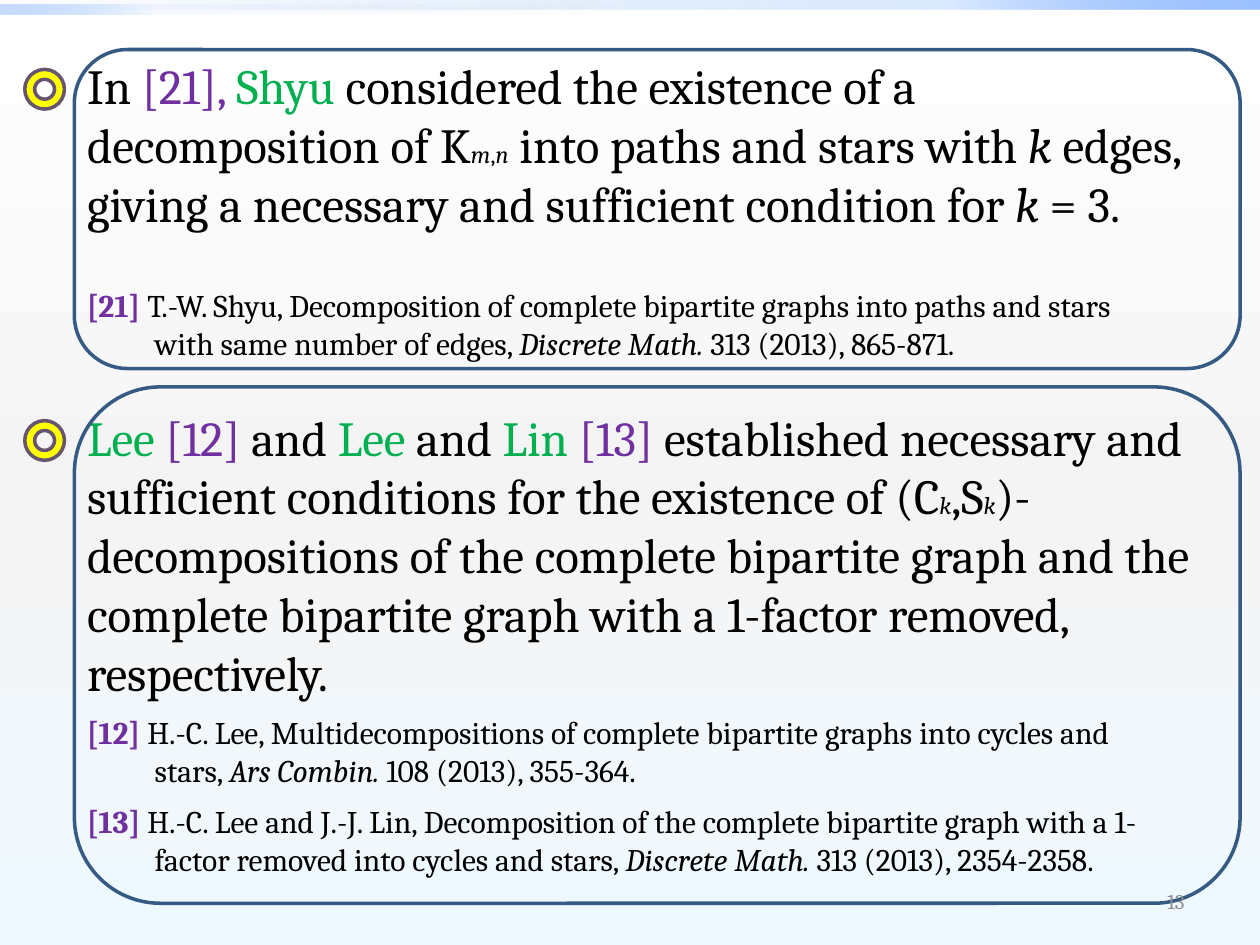
"""Builds a slide on earlier results for decompositions of bipartite graphs."""
from lxml.etree import SubElement
from pptx import Presentation
from pptx.dml.color import RGBColor
from pptx.enum.shapes import MSO_SHAPE as SHAPE
from pptx.enum.text import MSO_ANCHOR as ANCHOR, MSO_AUTO_SIZE as AUTO, PP_ALIGN as ALIGN
from pptx.oxml.ns import qn
from pptx.util import Cm, Pt

BLACK = RGBColor(0x00, 0x00, 0x00)
GREEN = RGBColor(0x00, 0xB0, 0x50)
PURPLE = RGBColor(0x70, 0x30, 0xA0)
YELLOW = RGBColor(0xFF, 0xFF, 0x00)
RING = RGBColor(0x67, 0x55, 0x6F)
NAVY = RGBColor(0x35, 0x5A, 0x83)
GRAY = RGBColor(0x8C, 0x8C, 0x8C)
WHITE = RGBColor(0xFF, 0xFF, 0xFF)
SILVER = RGBColor(0xF4, 0xF4, 0xF4)
ICE = RGBColor(0xEE, 0xF9, 0xFF)
DEEP = RGBColor(0x00, 0x58, 0xB7)
AZURE = RGBColor(0x4F, 0x95, 0xFF)
SKY = RGBColor(0x9E, 0xC2, 0xFF)

FONT = "Cambria"
PLAIN, ITALIC = {}, {"italic": True}
SUB, SUB_ITALIC = {"size": 14}, {"size": 14, "italic": True}
NAME, CITE = {"color": GREEN}, {"color": PURPLE}
LABEL = {"color": PURPLE, "bold": True}

BACKDROP = [(0, WHITE, 100), (55, SILVER, 100), (100, ICE, 100)]
BARS = [
    (0, 25.4, 315, [(0, DEEP, 0), (75, AZURE, 20), (100, SKY, 100)]),
    (0.1, 12.7, 135, [(0, DEEP, 0), (75, AZURE, 5), (100, SKY, 60)]),
]
PANELS = [
    {
        "frame": (1, 6.43), "text": (1, 4.3),
        "runs": [
            ("In ", PLAIN), ("[21], ", CITE), ("Shyu", NAME),
            (" considered the existence of a decomposition of K", PLAIN),
            ("m", SUB_ITALIC), (",", SUB), ("n", SUB_ITALIC),
            (" into paths and stars with ", PLAIN), ("k", ITALIC),
            (" edges, giving a necessary and sufficient condition for ", PLAIN),
            ("k", ITALIC), (" = 3.", PLAIN),
        ],
        "refs_top": 5.64,
        "refs": [
            ("[21] ", "T.-W. Shyu, Decomposition of complete bipartite graphs into paths and stars",
             "with same number of edges, ", "Discrete Math. ", "313 (2013), 865-871."),
        ],
    },
    {
        "frame": (7.8, 10.41), "text": (8.08, 6.25),
        "runs": [
            ("Lee ", NAME), ("[12] ", CITE), ("and ", PLAIN), ("Lee", NAME),
            (" and ", PLAIN), ("Lin ", NAME), ("[13] ", CITE),
            ("established necessary and sufficient conditions for the existence of (C", PLAIN),
            ("k", SUB_ITALIC), (",S", PLAIN), ("k", SUB_ITALIC),
            (")-decompositions of the complete bipartite graph and the complete "
             "bipartite graph with a 1-factor removed, respectively.", PLAIN),
        ],
        "refs_top": 14.25,
        "refs": [
            ("[12] ", "H.-C. Lee, Multidecompositions of complete bipartite graphs into cycles and",
             "stars, ", "Ars Combin. ", "108 (2013), 355-364."),
            ("[13] ", "H.-C. Lee and J.-J. Lin, Decomposition of the complete bipartite graph with a 1-",
             "factor removed into cycles and stars, ", "Discrete Math. ", "313 (2013), 2354-2358."),
        ],
    },
]
PAGE = "13"

LEFT, TEXT_W, FRAME_W = 1.5, 23.01, 23.5
REF_H, REF_HANG = 1.8, 1.37
RING_LEFT, RING_SIZE, RING_DROP = 0.5, 0.8, 0.4


def place(shape, left, top, width, height):
    shape.left, shape.top, shape.width, shape.height = map(Cm, (left, top, width, height))


def set_gradient(fill, element, angle, stops):
    fill.gradient()
    fill.gradient_angle = 360 - angle
    gs_list = element.find(".//" + qn("a:gsLst"))
    gs_list.clear()
    for position, color, alpha in stops:
        gs = SubElement(gs_list, qn("a:gs"), pos=str(position * 1000))
        rgb = SubElement(gs, qn("a:srgbClr"), val=str(color))
        SubElement(rgb, qn("a:alpha"), val=str(alpha * 1000))


def add_shape(s, kind, box, line=None):
    sp = s.shapes.add_shape(kind, *map(Cm, box))
    sp.shadow.inherit = False
    sp.fill.background()
    if line is None:
        sp.line.fill.background()
    else:
        sp.line.color.rgb = line
        sp.line.width = Pt(2)
    return sp


def add_run(p, text, size, color=BLACK, bold=False, italic=False):
    r = p.add_run()
    r.text = text
    r.font.name = FONT
    r.font.size = Pt(size)
    r.font.color.rgb = color
    r.font.bold, r.font.italic = bold, italic


def set_indent(p, margin, first):
    pPr = p._p.get_or_add_pPr()
    pPr.set("marL", str(Cm(margin)))
    pPr.set("indent", str(Cm(first)))
    SubElement(pPr, qn("a:buNone"))
    p.space_before = Pt(0)


def add_textbox(s, *box):
    tf = s.shapes.add_textbox(*map(Cm, box)).text_frame
    tf.word_wrap = True
    return tf


def add_reference(s, top, label, start, rest, journal, pages):
    p = add_textbox(s, LEFT, top, TEXT_W, REF_H).paragraphs[0]
    set_indent(p, REF_HANG, -REF_HANG)
    add_run(p, label, 18, **LABEL)
    add_run(p, start, 18)
    p.add_line_break()
    add_run(p, rest, 18)
    add_run(p, journal, 18, **ITALIC)
    add_run(p, pages, 18)


def add_panel(s, body, panel):
    top, height = panel["text"]
    place(body, LEFT, top, TEXT_W, height)
    tf = body.text_frame
    tf.auto_size, tf.vertical_anchor = AUTO.NONE, ANCHOR.TOP
    p = tf.paragraphs[0]
    set_indent(p, 0, 0)
    for text, style in panel["runs"]:
        add_run(p, text, **{"size": 28, **style})

    ring_box = (RING_LEFT, top + RING_DROP, RING_SIZE, RING_SIZE)
    ring = add_shape(s, SHAPE.DONUT, ring_box, RING)
    ring.fill.solid()
    ring.fill.fore_color.rgb = YELLOW
    for i, ref in enumerate(panel["refs"]):
        add_reference(s, panel["refs_top"] + i * REF_H, *ref)
    frame_top, frame_h = panel["frame"]
    add_shape(s, SHAPE.ROUNDED_RECTANGLE, (LEFT, frame_top, FRAME_W, frame_h), NAVY)


def main():
    prs = Presentation()
    prs.slide_width, prs.slide_height = Cm(25.4), Cm(19.05)
    s = prs.slides.add_slide(prs.slide_layouts[3])
    title = s.shapes.title.element
    title.getparent().remove(title)
    set_gradient(s.background.fill, s.element, 90, BACKDROP)

    for top, width, angle, stops in BARS:
        bar = add_shape(s, SHAPE.RECTANGLE, (0, top, width, 0.2))
        set_gradient(bar.fill, bar.element, angle, stops)
    for body, panel in zip(list(s.placeholders), PANELS):
        add_panel(s, body, panel)

    tf = add_textbox(s, 18.2, 17.66, 5.93, 1.01)
    tf.vertical_anchor = ANCHOR.MIDDLE
    tf.paragraphs[0].alignment = ALIGN.RIGHT
    add_run(tf.paragraphs[0], PAGE, 12, GRAY)
    prs.save("out.pptx")


if __name__ == "__main__":
    main()
